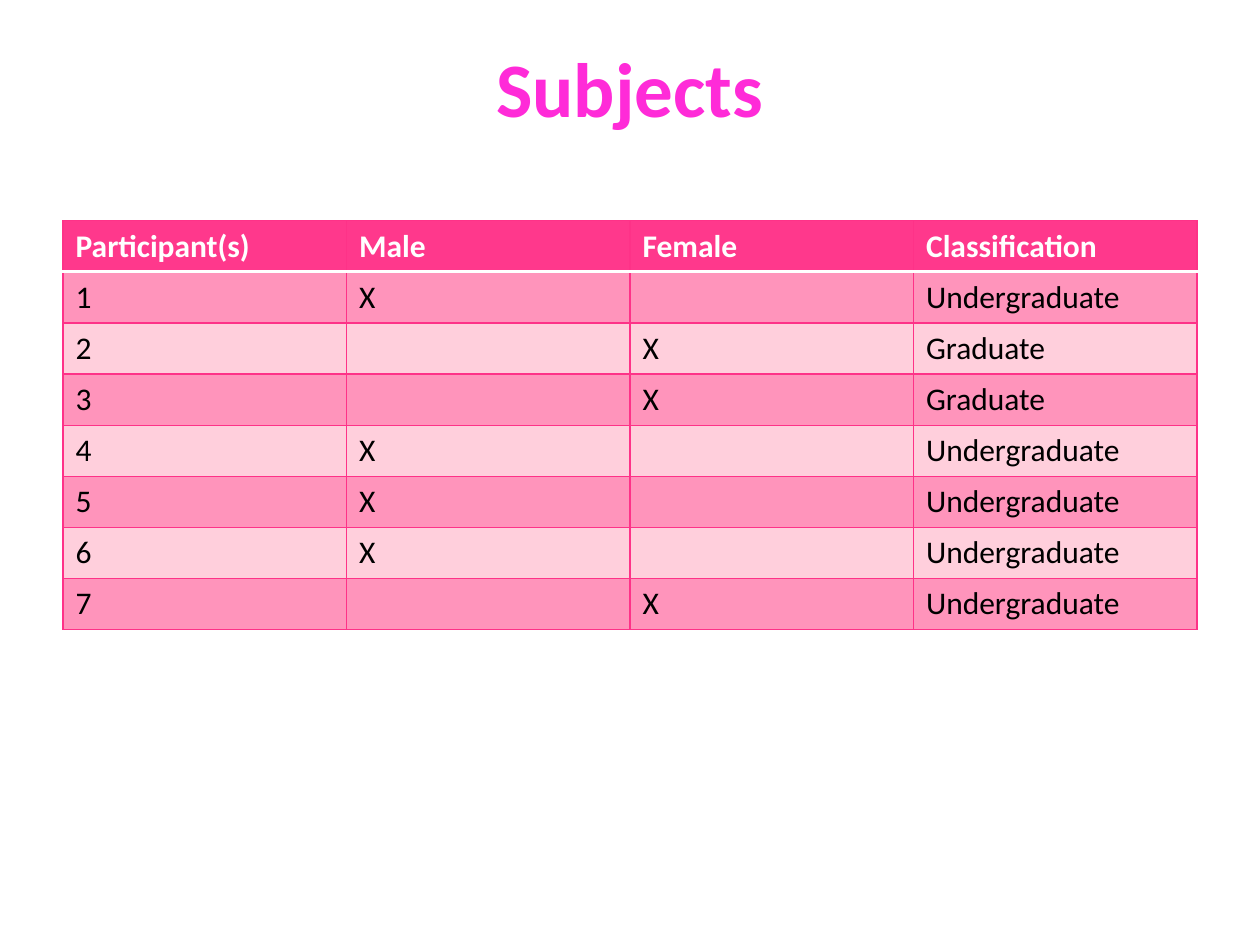
from lxml import etree
from pptx import Presentation
from pptx.dml.color import RGBColor
from pptx.enum.text import MSO_ANCHOR, PP_ALIGN
from pptx.oxml.ns import qn
from pptx.util import Cm, Pt

TITLE = "Subjects"
HEADERS = ("Participant(s)", "Male", "Female", "Classification")
PARTICIPANTS = (
    ("1", "X", "", "Undergraduate"),
    ("2", "", "X", "Graduate"),
    ("3", "", "X", "Graduate"),
    ("4", "X", "", "Undergraduate"),
    ("5", "X", "", "Undergraduate"),
    ("6", "X", "", "Undergraduate"),
    ("7", "", "X", "Undergraduate"),
)

FONT = "Calibri"
MAGENTA = RGBColor(0xFF, 0x2B, 0xD8)
HEADER_PINK = RGBColor(0xFF, 0x38, 0x8C)
BORDER_PINK = RGBColor(0xFE, 0x32, 0x88)
BAND_PINKS = (RGBColor(0xFF, 0x94, 0xBB), RGBColor(0xFF, 0xCF, 0xDC))
WHITE = RGBColor(0xFF, 0xFF, 0xFF)
BLACK = RGBColor(0x00, 0x00, 0x00)
CENTER, LEFT = PP_ALIGN.CENTER, PP_ALIGN.LEFT
MIDDLE = MSO_ANCHOR.MIDDLE

MARGIN = Cm(1.27)
CONTENT_WIDTH = Cm(22.86)
TABLE_TOP = Cm(4.45)
ROW_HEIGHT = Cm(1.03)


def write(text_frame, text, size=18, color=BLACK, bold=False, align=LEFT):
    paragraph = text_frame.paragraphs[0]
    paragraph.alignment = align
    paragraph.font.size = Pt(size)
    if not text:
        return
    run = paragraph.add_run()
    run.text = text
    run.font.name = FONT
    run.font.size = Pt(size)
    run.font.bold = bold
    run.font.color.rgb = color


def set_border(cell, side, color, width):
    """Draw one side ("L", "R", "T" or "B") of a cell; call before filling it."""
    line = etree.SubElement(cell._tc.get_or_add_tcPr(), qn(f"a:ln{side}"), w=str(Pt(width)))
    fill = etree.SubElement(line, qn("a:solidFill"))
    etree.SubElement(fill, qn("a:srgbClr"), val=str(color))


def add_title(slide):
    title = slide.shapes.title
    title.left, title.top = MARGIN, Cm(0.76)
    title.width, title.height = CONTENT_WIDTH, Cm(1.98)
    title.text_frame.vertical_anchor = MIDDLE
    write(title.text_frame, TITLE, size=44, color=MAGENTA, bold=True, align=CENTER)


def add_participant_table(slide):
    rows = (HEADERS,) + PARTICIPANTS
    table = slide.shapes.add_table(
        len(rows), len(HEADERS), MARGIN, TABLE_TOP, CONTENT_WIDTH, ROW_HEIGHT * len(rows)
    ).table
    for row_index, values in enumerate(rows):
        is_header = row_index == 0
        fill = HEADER_PINK if is_header else BAND_PINKS[(row_index - 1) % 2]
        for column_index, value in enumerate(values):
            cell = table.cell(row_index, column_index)
            for side in "LRTB":
                under_header = (row_index, side) in ((0, "B"), (1, "T"))
                color, width = (WHITE, 2) if under_header else (BORDER_PINK, 0.75)
                set_border(cell, side, color, width)
            cell.fill.solid()
            cell.fill.fore_color.rgb = fill
            write(cell.text_frame, value, color=WHITE if is_header else BLACK, bold=is_header)


def main():
    presentation = Presentation()
    presentation.slide_width, presentation.slide_height = Cm(25.4), Cm(19.05)
    title_only = presentation.slide_layouts[5]
    slide = presentation.slides.add_slide(title_only)
    add_title(slide)
    add_participant_table(slide)
    presentation.save("out.pptx")


if __name__ == "__main__":
    main()
